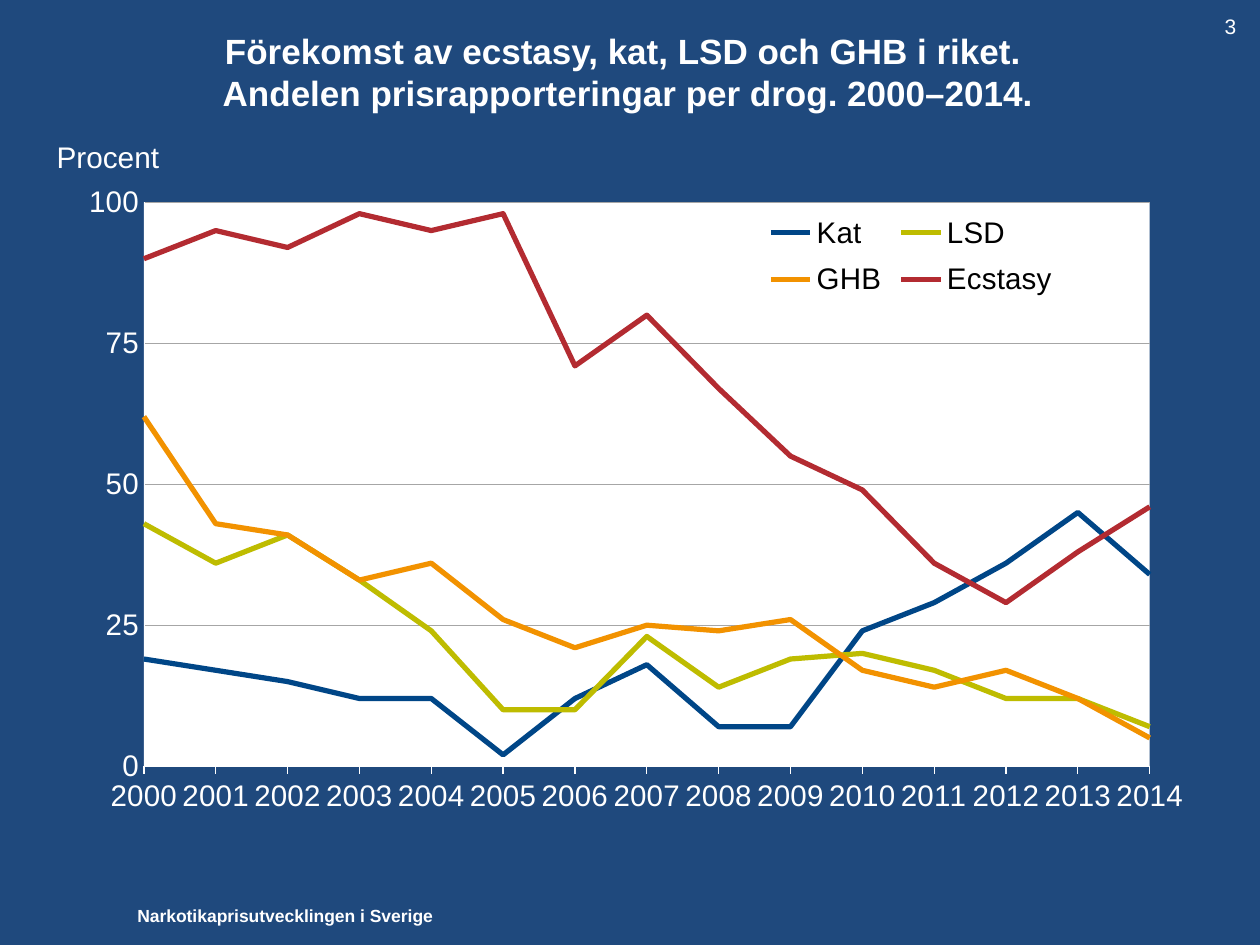
from lxml import etree
from pptx import Presentation
from pptx.chart.data import CategoryChartData
from pptx.dml.color import RGBColor
from pptx.enum.chart import XL_CHART_TYPE, XL_LEGEND_POSITION, XL_TICK_MARK
from pptx.enum.text import MSO_ANCHOR, MSO_AUTO_SIZE, PP_ALIGN
from pptx.oxml import parse_xml
from pptx.oxml.ns import nsdecls, qn
from pptx.util import Inches, Pt

LINE = XL_CHART_TYPE.LINE
TOP = XL_LEGEND_POSITION.TOP
OUT, NONE = XL_TICK_MARK.OUTSIDE, XL_TICK_MARK.NONE
MIDDLE, CENTER = MSO_ANCHOR.MIDDLE, PP_ALIGN.CENTER
FIXED = MSO_AUTO_SIZE.NONE

WHITE, NAVY, GREY, BLACK = "FFFFFF", "1F497D", "A6A6A6", "000000"
YEARS = [str(year) for year in range(2000, 2015)]
DRUGS = [
    ("Kat", "004687", (19, 17, 15, 12, 12, 2, 12, 18, 7, 7, 24, 29, 36, 45, 34)),
    ("LSD", "BEBC00", (43, 36, 41, 33, 24, 10, 10, 23, 14, 19, 20, 17, 12, 12, 7)),
    ("GHB", "F29200", (62, 43, 41, 33, 36, 26, 21, 25, 24, 26, 17, 14, 17, 12, 5)),
    ("Ecstasy", "B32B31", (90, 95, 92, 98, 95, 98, 71, 80, 67, 55, 49, 36, 29, 38, 46)),
]


def color(code):
    """Turn a hex string into a colour."""
    return RGBColor.from_string(code)


def style(font, size, code=WHITE, bold=False, face="Arial"):
    """Set face, size, colour and weight of a font."""
    font.name, font.size, font.bold = face, Pt(size), bold
    font.color.rgb = color(code)


def stroke(line, code, width):
    """Set colour and width of a line."""
    line.color.rgb = color(code)
    line.width = Pt(width)


def layout(box, inner=False):
    """Return a manual chart layout for x, y, w, h as shares of the chart."""
    node = etree.Element(qn("c:layout"))
    hand = etree.SubElement(node, qn("c:manualLayout"))
    pairs = [("layoutTarget", "inner")] if inner else []
    pairs += [("xMode", "edge"), ("yMode", "edge"), *zip("xywh", box)]
    for tag, val in pairs:
        etree.SubElement(hand, qn(f"c:{tag}")).set("val", str(val))
    return node


def add_title(slide, box, text):
    """Place the title in its placeholder."""
    title = slide.shapes.title
    title.left, title.top, title.width, title.height = map(Inches, box)
    frame = title.text_frame
    frame.text = text
    frame.auto_size, frame.vertical_anchor = FIXED, MIDDLE
    frame.paragraphs[0].alignment = CENTER
    style(frame.paragraphs[0].font, 20, bold=True)


def add_label(slide, box, text, size, bold=False, inset=0.1, right=0.1):
    """Place a one-line text box with a given left and right inset."""
    frame = slide.shapes.add_textbox(*map(Inches, box)).text_frame
    frame.text = text
    frame.word_wrap = True
    frame.margin_left, frame.margin_right = Inches(inset), Inches(right)
    style(frame.paragraphs[0].font, size, bold=bold)


def format_axes(chart):
    """Format the year axis and the percent axis."""
    years, share = chart.category_axis, chart.value_axis
    for axis, tick, width in ((years, OUT, 0.75), (share, NONE, 0.25)):
        axis.major_tick_mark, axis.minor_tick_mark = tick, NONE
        style(axis.tick_labels.font, 17)
        stroke(axis.format.line, WHITE, width)
    share.minimum_scale, share.maximum_scale, share.major_unit = 0, 100, 25
    share.tick_labels.number_format = "0"
    share.tick_labels.number_format_is_linked = False
    share.has_major_gridlines = True
    stroke(share.major_gridlines.format.line, GREY, 0.25)
    cross = parse_xml(f'<c:crossBetween {nsdecls("c")} val="midCat"/>')
    share._element.find(qn("c:majorUnit")).addprevious(cross)


def format_plot(chart):
    """Place the plot area and fill it with white."""
    area = chart._chartSpace.chart.plotArea
    for old in area.findall(qn("c:layout")):
        area.remove(old)
    area.insert(0, layout((0.076, 0.049, 0.903, 0.854), inner=True))
    area.append(parse_xml(
        f'<c:spPr {nsdecls("c", "a")}><a:solidFill><a:srgbClr val="{WHITE}"/>'
        "</a:solidFill><a:ln><a:noFill/></a:ln></c:spPr>"))


def format_legend(chart):
    """Place the legend inside the plot area."""
    chart.has_legend = True
    legend = chart.legend
    legend.position, legend.include_in_layout = TOP, False
    style(legend.font, 17, BLACK)
    mark = legend._element.find(qn("c:legendPos"))
    for old in legend._element.findall(qn("c:layout")):
        legend._element.remove(old)
    mark.addnext(layout((0.63, 0.05, 0.27, 0.16)))


def add_lines(slide, box):
    """Add the line chart of drug shares per year."""
    data = CategoryChartData(number_format="0")
    data.categories = YEARS
    for name, _, vals in DRUGS:
        data.add_series(name, vals)
    chart = slide.shapes.add_chart(LINE, *map(Inches, box), data).chart
    chart.has_title = False
    style(chart.font, 18.1, bold=True, face="Times New Roman")
    for line, (_, code, _) in zip(chart.plots[0].series, DRUGS):
        line.smooth = False
        stroke(line.format.line, code, 3)
    format_axes(chart)
    format_plot(chart)
    format_legend(chart)


def main():
    """Build the slide and save it."""
    deck = Presentation()
    deck.slide_width, deck.slide_height = Inches(10), Inches(7.5)
    slide = deck.slides.add_slide(deck.slide_layouts[5])
    fill = slide.background.fill
    fill.solid()
    fill.fore_color.rgb = color(NAVY)
    add_label(slide, (0.76, 7.13, 2.8, 0.27),
              "Narkotikaprisutvecklingen i Sverige", 10, True, 0.33, 0)
    add_title(slide, (0.21, 0.07, 9.55, 1),
              "Förekomst av ecstasy, kat, LSD och GHB i riket. \v"
              "Andelen prisrapporteringar per drog. 2000–2014.")
    add_lines(slide, (0.47, 1.35, 8.92, 5.24))
    add_label(slide, (9.53, 0.06, 0.45, 0.3), "3", 12, inset=0.19)
    add_label(slide, (0.35, 1.05, 1.02, 0.39), "Procent", 17)
    deck.save("out.pptx")


if __name__ == "__main__":
    main()
